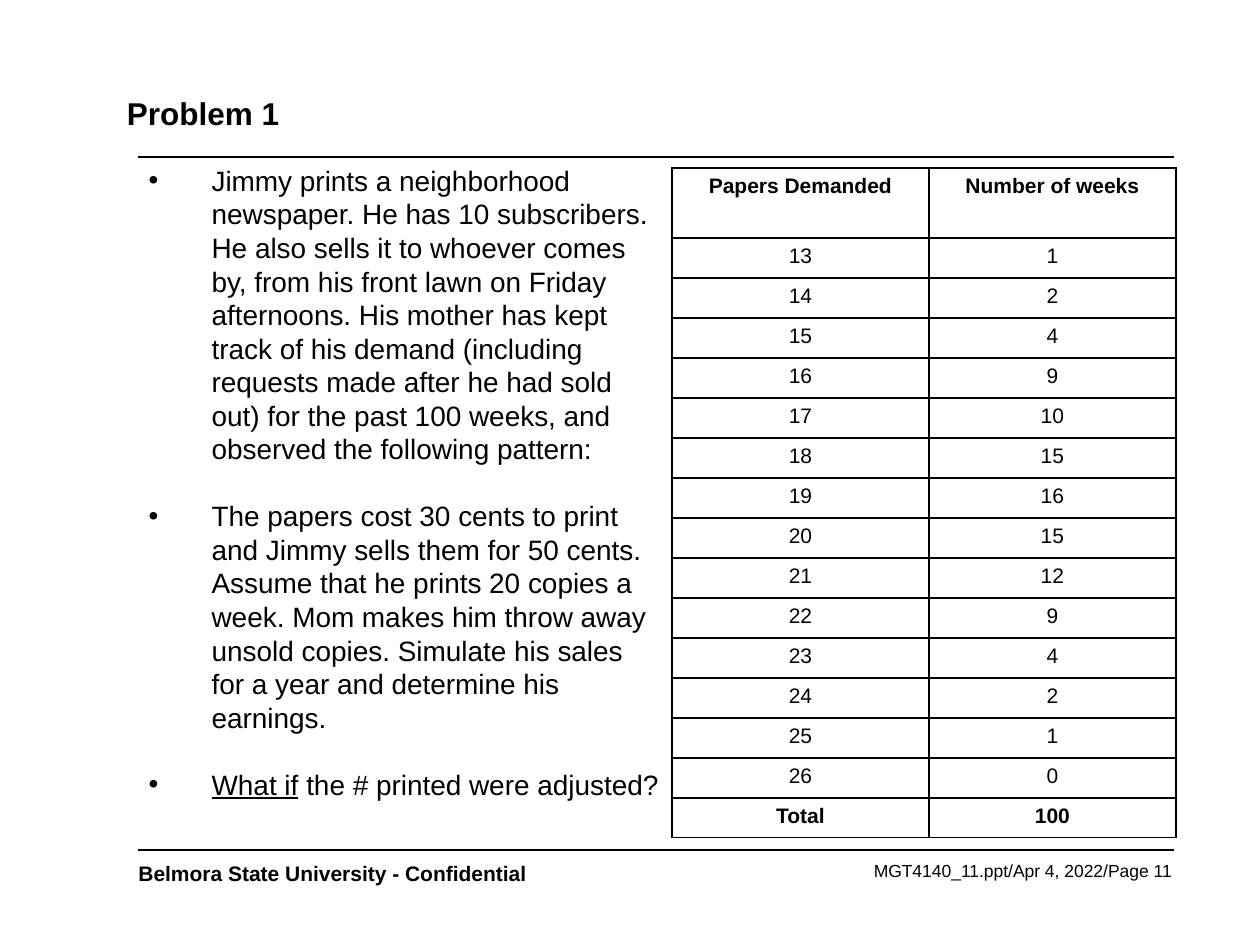
"""Builds the slide for Problem 1: the newspaper demand simulation."""
import pptx
import pptx.dml.color
import pptx.enum.shapes
import pptx.enum.text
import pptx.oxml
import pptx.oxml.ns
import pptx.util

COLORS = {"ink": "000000"}
FONT = "Arial"
PX = 914400 // 126
ALIGN = pptx.enum.text.PP_ALIGN
ANCHOR = pptx.enum.text.MSO_ANCHOR

TITLE = "Problem 1"
POINTS = [
    [("Jimmy prints a neighborhood newspaper. He has 10 subscribers. He also sells it to "
      "whoever comes by, from his front lawn on Friday afternoons. His mother has kept track "
      "of his demand (including requests made after he had sold out) for the past 100 weeks, "
      "and observed the following pattern:", False)],
    [("The papers cost 30 cents to print and Jimmy sells them for 50 cents. Assume that he "
      "prints 20 copies a week. Mom makes him throw away unsold copies. Simulate his sales "
      "for a year and determine his earnings.", False)],
    [("What if", True), (" the # printed were adjusted?", False)],
]
HEADER = ("Papers Demanded", "Number of weeks")
FIRST_DEMAND = 13
WEEKS = [1, 2, 4, 9, 10, 15, 16, 15, 12, 9, 4, 2, 1, 0]
FOOTERS = [
    ("Belmora State University - Confidential", (126, 854, 484, 38),
     {"size": 12, "bold": True}),
    ("MGT4140_11.ppt/Apr 4, 2022/Page 11", (703, 854, 481, 33),
     {"size": 10, "align": ALIGN.RIGHT}),
]
RULE_LEFT, RULE_RIGHT = 138, 1174
RULE_TOPS = (157, 850)
TABLE_LEFT, TABLE_TOP = 672, 168
COLUMN_WIDTHS = (257, 247)
HEADER_HEIGHT, ROW_HEIGHT = 70, 40


def px(*lengths):
    return [pptx.util.Emu(length * PX) for length in lengths]


def write(paragraph, text, size=12, bold=False, underline=False, align=ALIGN.LEFT):
    paragraph.alignment = align
    run = paragraph.add_run()
    run.text = text
    font = run.font
    font.name, font.size, font.bold = FONT, pptx.util.Pt(size), bold
    font.underline = underline
    font.color.rgb = pptx.dml.color.RGBColor.from_string(COLORS["ink"])


def place(shape, left, top, width, height):
    shape.left, shape.top, shape.width, shape.height = px(left, top, width, height)


def add_rule(slide, top):
    rule = slide.shapes.add_connector(
        pptx.enum.shapes.MSO_CONNECTOR.STRAIGHT, *px(RULE_LEFT, top, RULE_RIGHT, top))
    rule.line.width = pptx.util.Pt(1)
    rule.line.color.rgb = pptx.dml.color.RGBColor.from_string(COLORS["ink"])
    rule._element.spPr.append(pptx.oxml.parse_xml(
        f'<a:effectLst {pptx.oxml.ns.nsdecls("a")}/>'))


def add_borders(cell):
    properties = cell._tc.get_or_add_tcPr()
    for position, side in enumerate("LRTB"):
        properties.insert(position, pptx.oxml.parse_xml(
            f'<a:ln{side} {pptx.oxml.ns.nsdecls("a")} w="12700"><a:solidFill>'
            f'<a:srgbClr val="{COLORS["ink"]}"/></a:solidFill></a:ln{side}>'))


def add_demand_table(slide):
    demand = [(FIRST_DEMAND + step, weeks) for step, weeks in enumerate(WEEKS)]
    rows = [HEADER, *demand, ("Total", sum(WEEKS))]
    heights = [HEADER_HEIGHT] + [ROW_HEIGHT] * (len(rows) - 1)
    table = slide.shapes.add_table(
        len(rows), len(HEADER),
        *px(TABLE_LEFT, TABLE_TOP, sum(COLUMN_WIDTHS), sum(heights))).table
    table.first_row = table.horz_banding = False
    for column, width in zip(table.columns, COLUMN_WIDTHS):
        column.width = px(width)[0]
    for index, (row, height) in enumerate(zip(rows, heights)):
        table.rows[index].height = px(height)[0]
        for cell, value in zip(table.rows[index].cells, row):
            cell.fill.background()
            add_borders(cell)
            write(cell.text_frame.paragraphs[0], str(value), align=ALIGN.CENTER,
                  bold=index in (0, len(rows) - 1))


def fill_title(title):
    place(title, 105, 32, 1071, 116)
    frame = title.text_frame
    frame.auto_size = pptx.enum.text.MSO_AUTO_SIZE.NONE
    frame.vertical_anchor = ANCHOR.BOTTOM
    frame.margin_left, frame.margin_bottom = px(22, 16)
    write(frame.paragraphs[0], TITLE, size=18, bold=True)


def fill_points(body):
    place(body, 136, 157, 536, 680)
    frame = body.text_frame
    frame.auto_size = pptx.enum.text.MSO_AUTO_SIZE.NONE
    frame.vertical_anchor = ANCHOR.TOP
    for index, runs in enumerate(POINTS):
        paragraph = frame.add_paragraph() if index else frame.paragraphs[0]
        paragraph.space_before = pptx.util.Pt(19 if index else 0)
        properties = paragraph._p.get_or_add_pPr()
        properties.set("marL", str(63 * PX))
        properties.set("indent", str(-63 * PX))
        for text, underline in runs:
            write(paragraph, text, size=16, underline=underline)


def main():
    deck = pptx.Presentation()
    deck.slide_width, deck.slide_height = px(1260, 945)
    slide = deck.slides.add_slide(deck.slide_layouts[1])
    fill_title(slide.shapes.title)
    fill_points(slide.placeholders[1])
    for top in RULE_TOPS:
        add_rule(slide, top)
    add_demand_table(slide)
    for text, box, style in FOOTERS:
        frame = slide.shapes.add_textbox(*px(*box)).text_frame
        frame.word_wrap = True
        write(frame.paragraphs[0], text, **style)
    deck.save("out.pptx")


if __name__ == "__main__":
    main()
